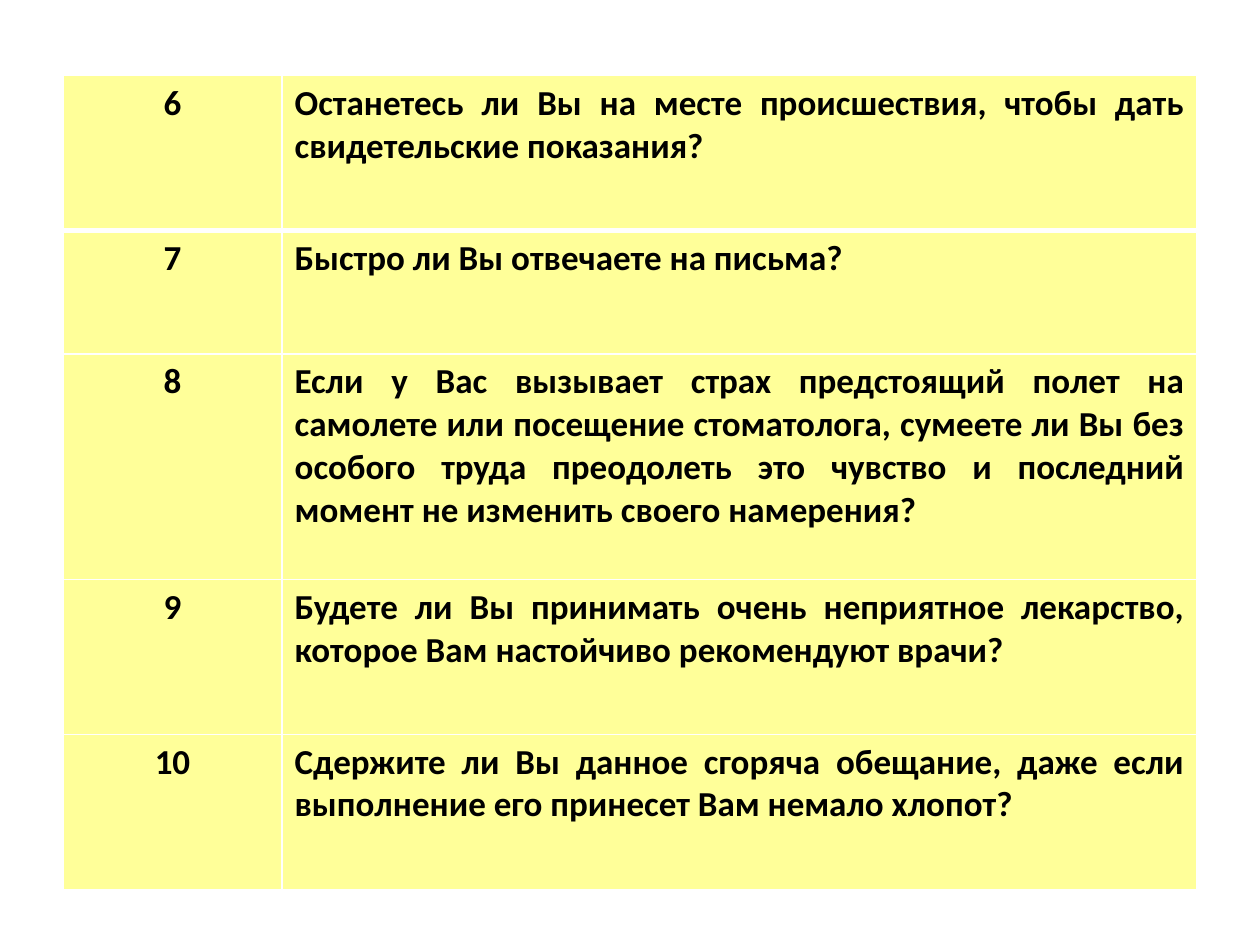
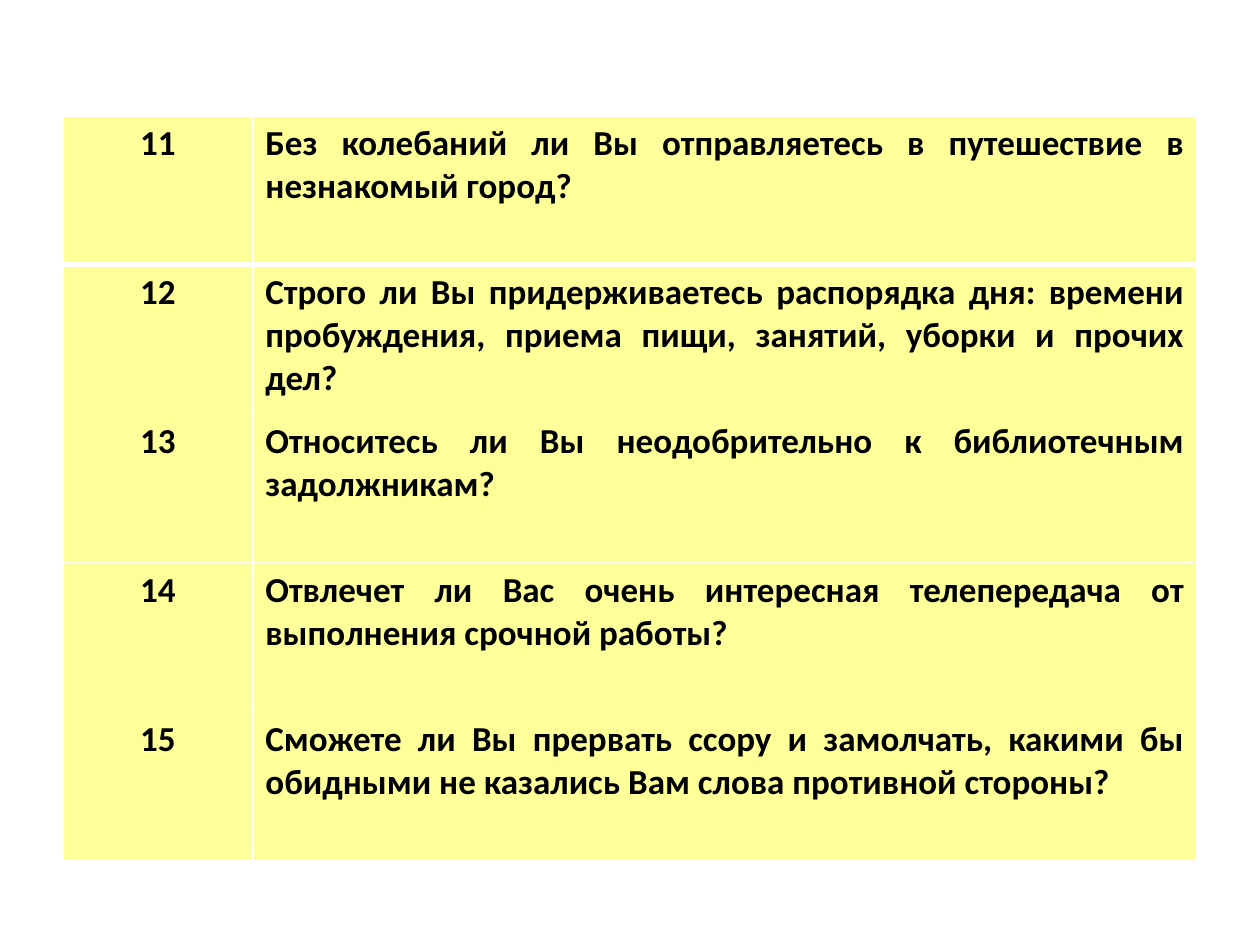
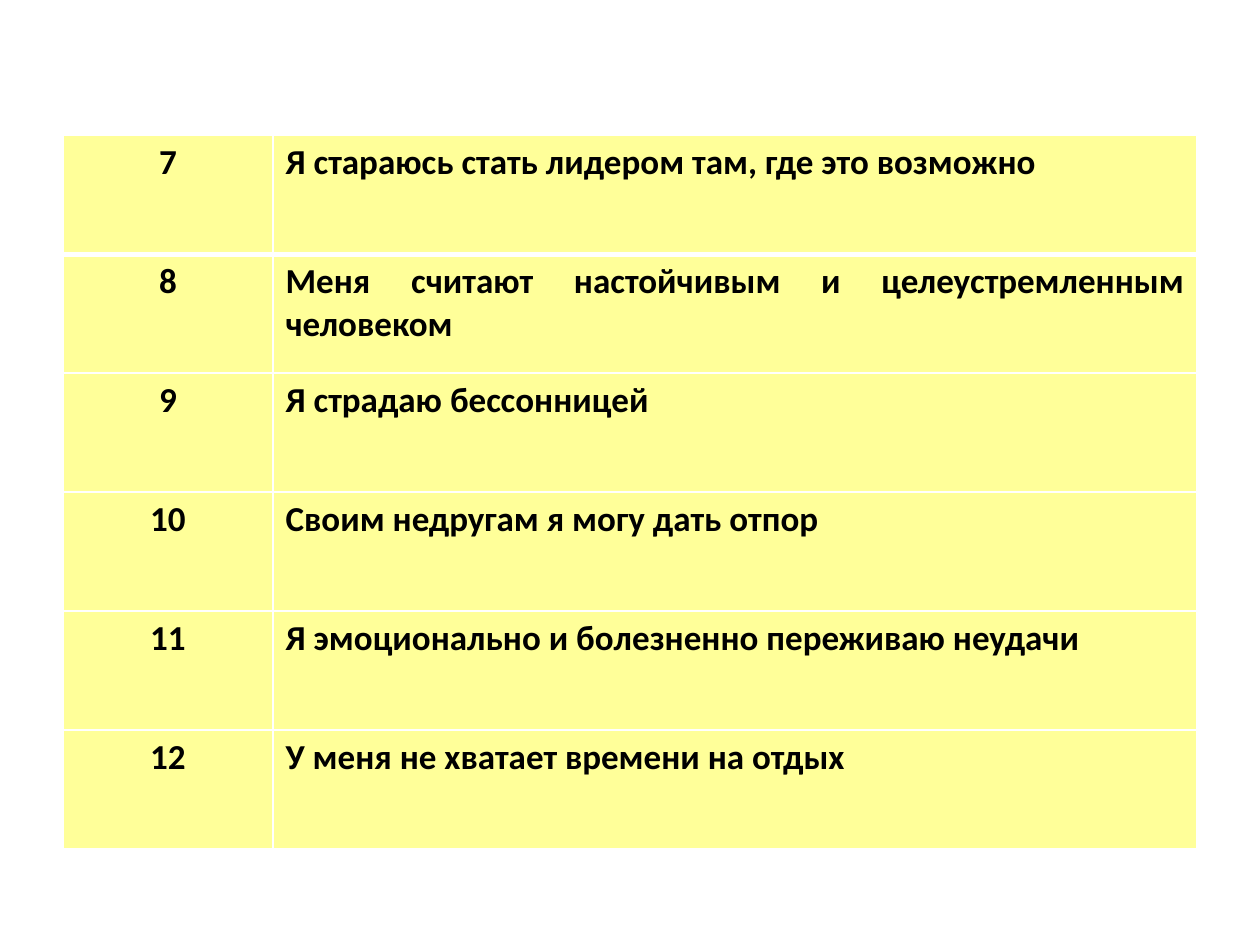
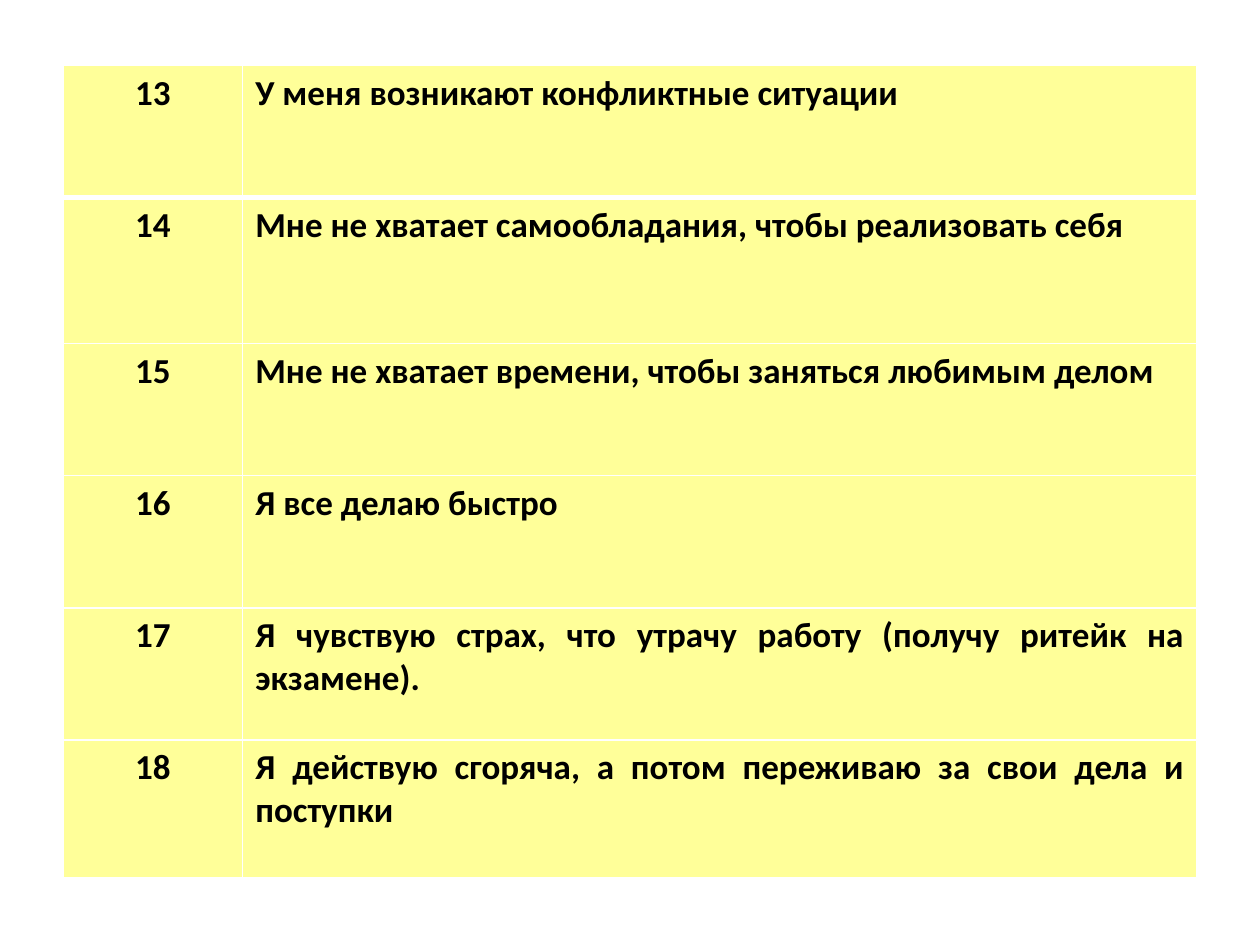
from lxml.etree import SubElement
from pptx import Presentation
from pptx.dml.color import RGBColor
from pptx.enum.text import PP_ALIGN
from pptx.oxml.ns import qn
from pptx.util import Pt


def color(value):
    return RGBColor.from_string(value)


def add_border(cell, side, width):
    line = SubElement(cell._tc.get_or_add_tcPr(), qn(f"a:ln{side}"), w=str(Pt(width)))
    fill = SubElement(line, qn("a:solidFill"))
    SubElement(fill, qn("a:srgbClr"), val=BORDER_COLOR)


CELL_COLOR = "FFFF99"
BORDER_COLOR = "FFFFFF"
TEXT_COLOR = "000000"
TEXT_FORMAT = {"name": "Calibri", "size": Pt(20), "bold": True}
ALIGNMENTS = [PP_ALIGN.CENTER, PP_ALIGN.JUSTIFY]
TABLE_LEFT = 36
TABLE_WIDTH = 648

questionnaires = [
    {
        "top": 43.2,
        "number_width": 125.2,
        "row_heights": [88.5, 70.5, 129, 88.5, 88.5],
        "first_number": 6,
        "statements": [
            "Останетесь ли Вы на месте происшествия, чтобы дать свидетельские показания?",
            "Быстро ли Вы отвечаете на письма?",
            "Если у Вас вызывает страх предстоящий полет на самолете или посещение "
            "стоматолога, сумеете ли Вы без особого труда преодолеть это чувство и "
            "последний момент не изменить своего намерения?",
            "Будете ли Вы принимать очень неприятное лекарство, которое Вам "
            "настойчиво рекомендуют врачи?",
            "Сдержите ли Вы данное сгоряча обещание, даже если выполнение его "
            "принесет Вам немало хлопот?",
        ],
    },
    {
        "top": 66.2,
        "number_width": 108.5,
        "row_heights": [85.1] * 5,
        "first_number": 11,
        "statements": [
            "Без колебаний ли Вы отправляетесь в путешествие в незнакомый город?",
            "Строго ли Вы придерживаетесь распорядка дня: времени пробуждения, "
            "приема пищи, занятий, уборки и прочих дел?",
            "Относитесь ли Вы неодобрительно к библиотечным задолжникам?",
            "Отвлечет ли Вас очень интересная телепередача от выполнения срочной работы?",
            "Сможете ли Вы прервать ссору и замолчать, какими бы обидными не "
            "казались Вам слова противной стороны?",
        ],
    },
    {
        "top": 77.3,
        "number_width": 120,
        "row_heights": [68] * 6,
        "first_number": 7,
        "statements": [
            "Я стараюсь стать лидером там, где это возможно",
            "Меня считают настойчивым и целеустремленным человеком",
            "Я страдаю бессонницей",
            "Своим недругам я могу дать отпор",
            "Я эмоционально и болезненно переживаю неудачи",
            "У меня не хватает времени на отдых",
        ],
    },
    {
        "top": 37.4,
        "number_width": 102.7,
        "row_heights": [75.5, 83.5, 75.5, 75.5, 75.5, 79],
        "first_number": 13,
        "statements": [
            "У меня возникают конфликтные ситуации",
            "Мне не хватает самообладания, чтобы реализовать себя",
            "Мне не хватает времени, чтобы заняться любимым делом",
            "Я все делаю быстро",
            "Я чувствую страх, что утрачу работу (получу ритейк на экзамене).",
            "Я действую сгоряча, а потом переживаю за свои дела и поступки",
        ],
    },
]

presentation = Presentation()
presentation.slide_width = Pt(720)
presentation.slide_height = Pt(540)

for questionnaire in questionnaires:
    slide = presentation.slides.add_slide(presentation.slide_layouts[6])
    row_heights = questionnaire["row_heights"]
    number_width = questionnaire["number_width"]
    table = slide.shapes.add_table(
        len(row_heights), 2, Pt(TABLE_LEFT), Pt(questionnaire["top"]),
        Pt(TABLE_WIDTH), Pt(sum(row_heights)),
    ).table
    table.horz_banding = False
    table.columns[0].width = Pt(number_width)
    table.columns[1].width = Pt(TABLE_WIDTH - number_width)

    for row_index, statement in enumerate(questionnaire["statements"]):
        table.rows[row_index].height = Pt(row_heights[row_index])
        number = str(questionnaire["first_number"] + row_index)
        border_widths = {
            "L": 1,
            "R": 1,
            "T": 3 if row_index == 1 else 1,
            "B": 3 if row_index == 0 else 1,
        }
        for column_index, text in enumerate([number, statement]):
            cell = table.cell(row_index, column_index)
            for side, width in border_widths.items():
                add_border(cell, side, width)
            cell.fill.solid()
            cell.fill.fore_color.rgb = color(CELL_COLOR)
            paragraph = cell.text_frame.paragraphs[0]
            paragraph.alignment = ALIGNMENTS[column_index]
            run = paragraph.add_run()
            run.text = text
            for attribute, value in TEXT_FORMAT.items():
                setattr(run.font, attribute, value)
            run.font.color.rgb = color(TEXT_COLOR)

presentation.save("out.pptx")
